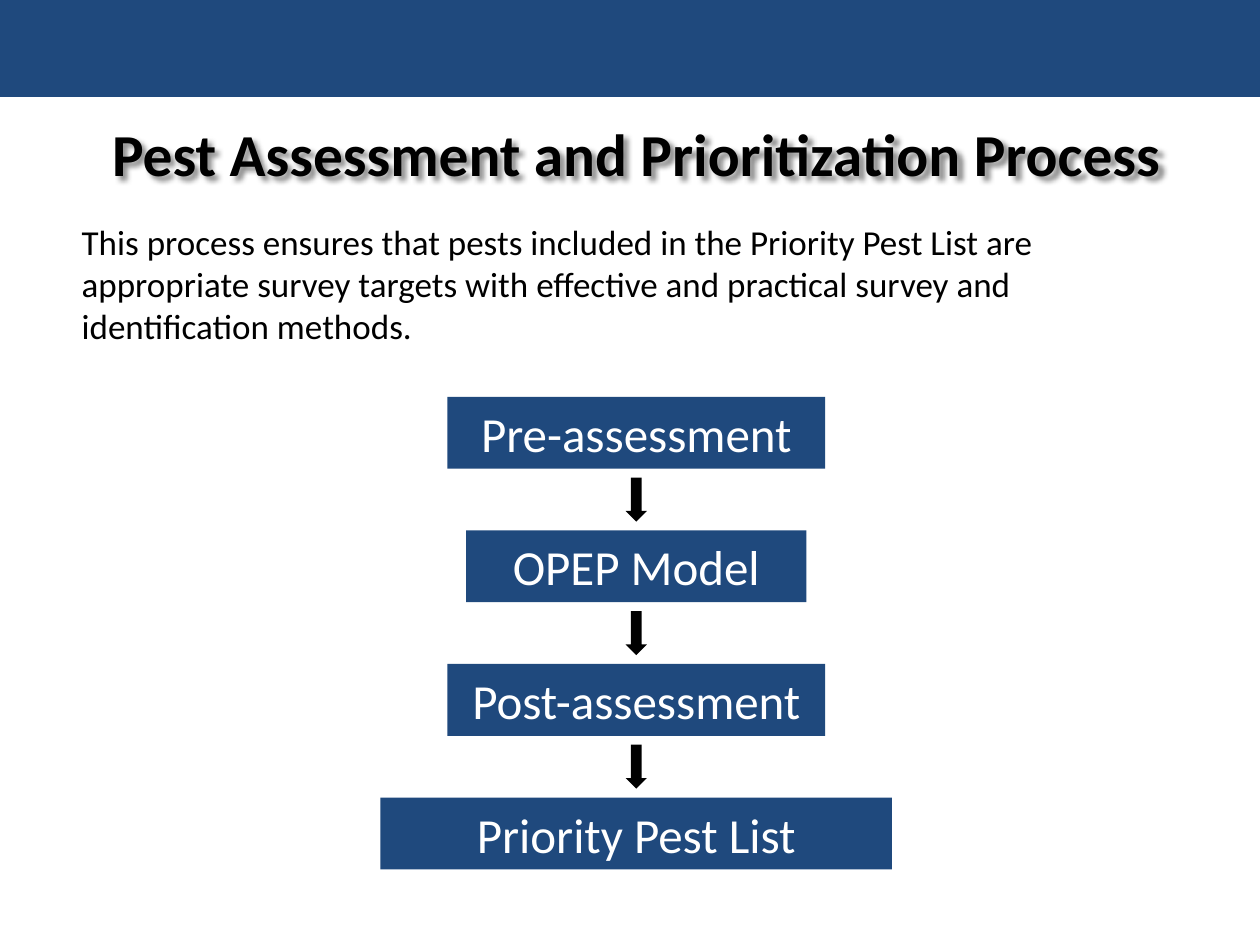
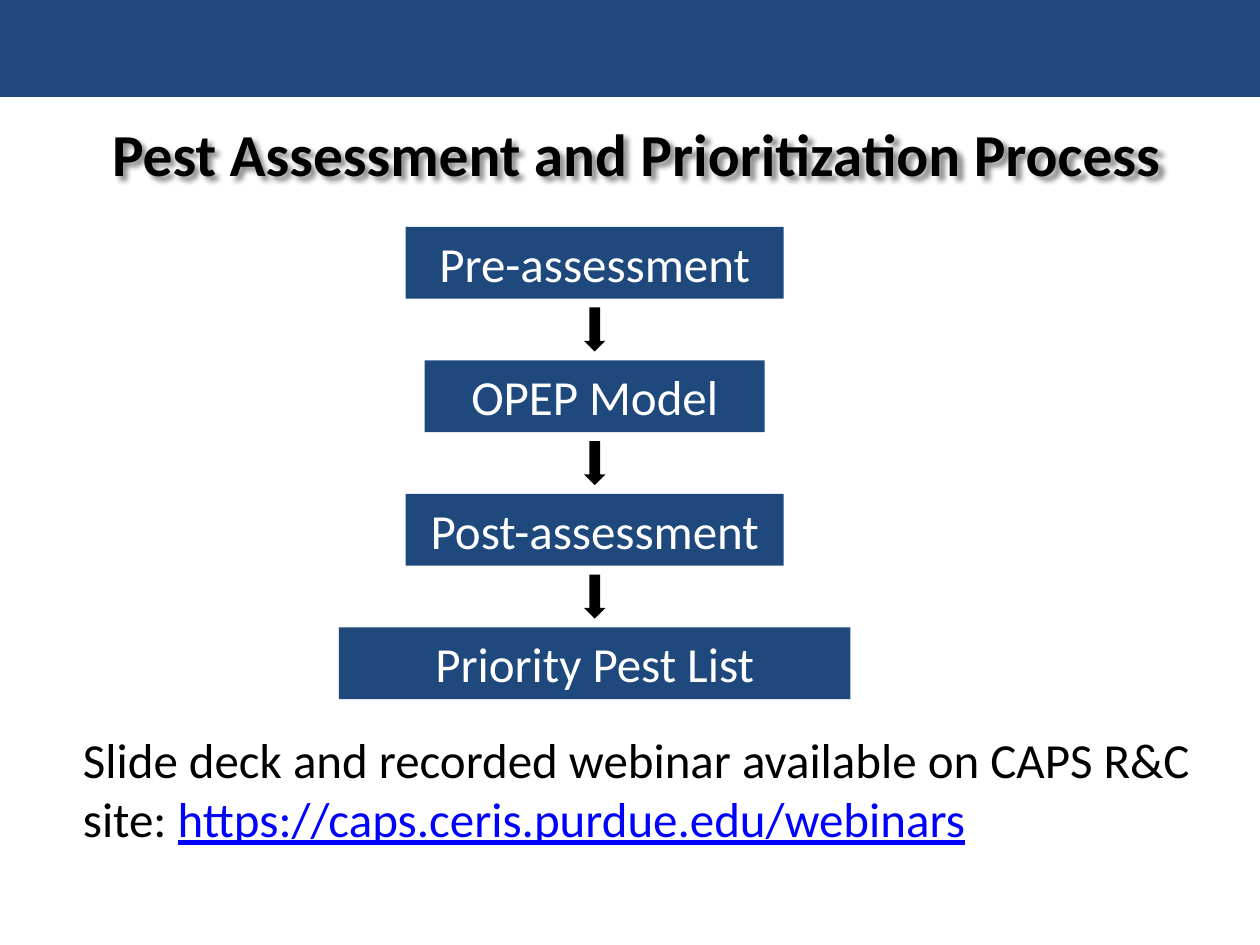
from dataclasses import dataclass

from lxml import etree
from pptx import Presentation
from pptx import util as u
from pptx.dml.color import RGBColor
from pptx.enum import shapes, text
from pptx.oxml import ns


@dataclass(frozen=True)
class Theme:
    font: str = "Calibri"
    navy: RGBColor = RGBColor(0x1F, 0x49, 0x7D)
    black: RGBColor = RGBColor(0, 0, 0)
    white: RGBColor = RGBColor(0xFF, 0xFF, 0xFF)
    link: RGBColor = RGBColor(0, 0, 0xFF)
    title_size: int = 34
    large_size: int = 28
    body_size: int = 20


TITLE = "Pest Assessment and Prioritization Process"
STEPS = [
    ("Pre-assessment", 3),
    ("OPEP Model", 2.7),
    ("Post-assessment", 3),
    ("Priority Pest List", 4.06),
]
STEP_HEIGHT = 0.57
STEP_PITCH = 1.06
ARROW_WIDTH = 0.17
ARROW_HEIGHT = 0.35
ARROW_OFFSET = 0.64


class Deck:
    def __init__(self, theme):
        self.theme = theme
        self.presentation = Presentation()
        self.presentation.slide_width = u.Inches(10)
        self.presentation.slide_height = u.Inches(7.5)
        self.slide = None

    def add_slide(self, title):
        layout = self.presentation.slide_layouts[6]
        self.slide = self.presentation.slides.add_slide(layout)
        self.block(shapes.MSO_SHAPE.RECTANGLE, 0, 0, 10, 0.77, self.theme.navy)
        self.title(title)

    def format_run(self, run, size, color, bold=False, underline=False):
        font = run.font
        font.name = self.theme.font
        font.size = u.Pt(size)
        font.color.rgb = color
        font.bold = bold
        font.underline = underline

    def block(self, kind, left, top, width, height, color):
        shape = self.slide.shapes.add_shape(
            kind, u.Inches(left), u.Inches(top), u.Inches(width), u.Inches(height)
        )
        shape.shadow.inherit = False
        shape.fill.solid()
        shape.fill.fore_color.rgb = color
        shape.line.fill.background()
        return shape

    def text_box(self, left, top, width, height, content, size):
        shape = self.slide.shapes.add_textbox(
            u.Inches(left), u.Inches(top), u.Inches(width), u.Inches(height)
        )
        shape.text_frame.word_wrap = True
        paragraph = shape.text_frame.paragraphs[0]
        paragraph.text = content
        self.format_run(paragraph.runs[0], size, self.theme.black)
        return shape

    def title(self, content):
        shape = self.text_box(0.55, 0.82, 9, 0.78, content, self.theme.title_size)
        shape.text_frame.vertical_anchor = text.MSO_ANCHOR.MIDDLE
        paragraph = shape.text_frame.paragraphs[0]
        paragraph.alignment = text.PP_ALIGN.CENTER
        paragraph.runs[0].font.bold = True
        self.soft_shadow(shape)

    def soft_shadow(self, shape):
        effects = etree.SubElement(shape.element.spPr, ns.qn("a:effectLst"))
        shadow = etree.SubElement(
            effects, ns.qn("a:outerShdw"),
            blurRad="38100", dist="38100", dir="2700000", algn="tl",
        )
        color = etree.SubElement(shadow, ns.qn("a:srgbClr"), val=str(self.theme.black))
        etree.SubElement(color, ns.qn("a:alpha"), val="43000")

    def step(self, center, top, width, label):
        shape = self.block(
            shapes.MSO_SHAPE.RECTANGLE, center - width / 2, top,
            width, STEP_HEIGHT, self.theme.navy,
        )
        paragraph = shape.text_frame.paragraphs[0]
        paragraph.text = label
        paragraph.alignment = text.PP_ALIGN.CENTER
        self.format_run(paragraph.runs[0], self.theme.large_size, self.theme.white)

    def process(self, center, top):
        for index, (label, width) in enumerate(STEPS):
            step_top = top + index * STEP_PITCH
            self.step(center, step_top, width, label)
            if index < len(STEPS) - 1:
                self.block(
                    shapes.MSO_SHAPE.DOWN_ARROW, center - ARROW_WIDTH / 2,
                    step_top + ARROW_OFFSET, ARROW_WIDTH, ARROW_HEIGHT,
                    self.theme.black,
                )

    def add_address(self, shape, address):
        run = shape.text_frame.paragraphs[0].add_run()
        run.text = address
        self.format_run(run, self.theme.large_size, self.theme.link, underline=True)


def main():
    theme = Theme()
    deck = Deck(theme)

    deck.add_slide(TITLE)
    deck.process(center=5.05, top=3.15)
    deck.text_box(
        0.55, 1.7, 9, 1.11,
        "This process ensures that pests included in the Priority Pest List are "
        "appropriate survey targets with effective and practical survey and "
        "identification methods.",
        theme.body_size,
    )

    deck.add_slide(TITLE)
    webinar_note = deck.text_box(
        0.56, 5.74, 9, 1.04,
        "Slide deck and recorded webinar available on CAPS R&C site: ",
        theme.large_size,
    )
    deck.add_address(webinar_note, "https://caps.ceris.purdue.edu/webinars")
    deck.process(center=4.72, top=1.8)

    deck.presentation.save("out.pptx")


if __name__ == "__main__":
    main()
